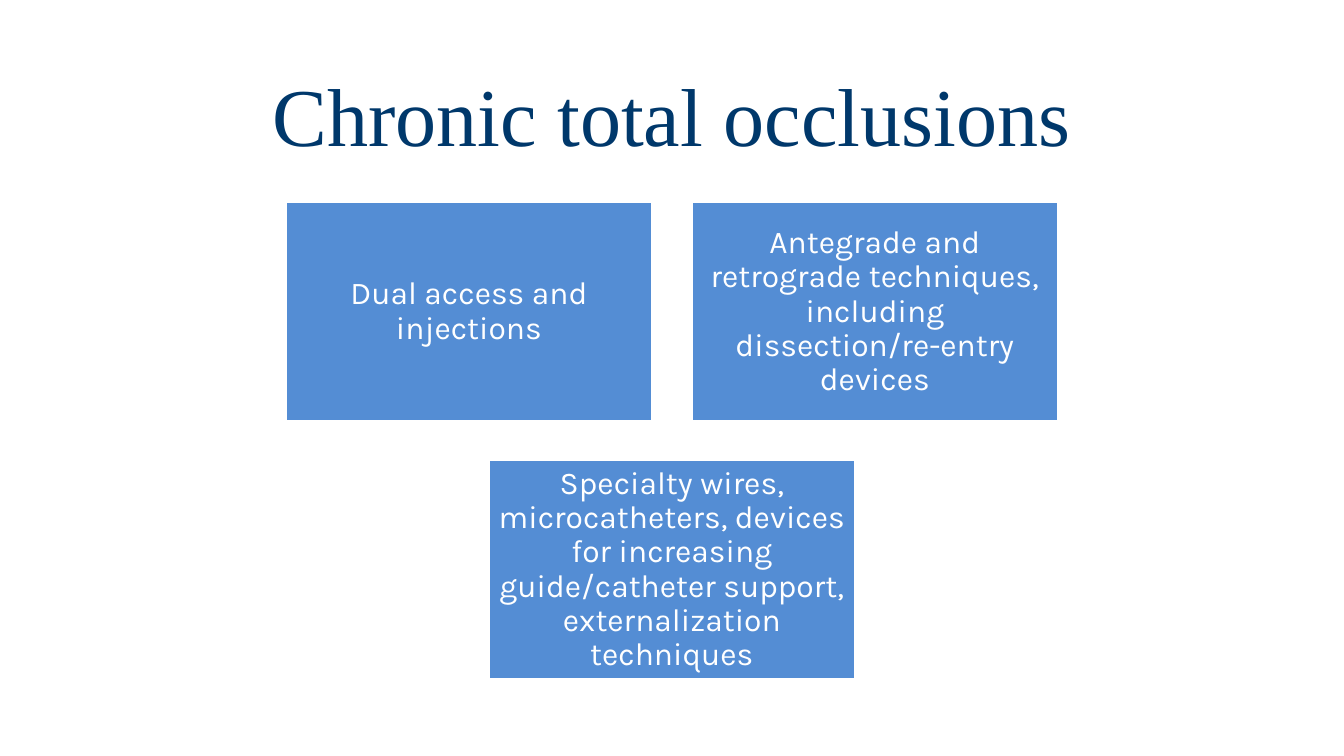
"""Build the slide on chronic total occlusions with three technique cards."""
from dataclasses import dataclass

from pptx import Presentation
from pptx import util as u
from pptx.dml.color import RGBColor
from pptx.enum import shapes, text
from pptx.slide import Slide
from pptx.text.text import TextFrame

NAVY = RGBColor(0x00, 0x38, 0x6B)
BLUE = RGBColor(0x54, 0x8D, 0xD4)
WHITE = RGBColor(0xFF, 0xFF, 0xFF)

SLIDE_WIDTH = 10
SLIDE_HEIGHT = SLIDE_WIDTH * 9 / 16
CARD_WIDTH, CARD_HEIGHT, GAP = 2.74, 1.64, 0.28
GRID_LEFT = (SLIDE_WIDTH - 2 * CARD_WIDTH - GAP) / 2
GRID_TOP = 1.5
INSET = 0.07


@dataclass(frozen=True)
class Card:
    """A technique and its column and row on the grid."""
    label: str
    column: float
    row: int


CARDS = (
    Card("Dual access and injections", 0, 0),
    Card("Antegrade and retrograde techniques, including dissection/re-entry devices", 1, 0),
    Card("Specialty wires, microcatheters, devices for increasing guide/catheter support, "
         "externalization techniques", 0.5, 1),
)


def write(frame: TextFrame, content: str, font_name: str, size: float, color: RGBColor,
          line_spacing: float) -> None:
    """Write one centred paragraph in the middle of a text frame."""
    frame.word_wrap = True
    frame.auto_size = text.MSO_AUTO_SIZE.NONE
    frame.vertical_anchor = text.MSO_ANCHOR.MIDDLE
    paragraph = frame.paragraphs[0]
    paragraph.alignment = text.PP_ALIGN.CENTER
    paragraph.line_spacing = line_spacing
    run = paragraph.add_run()
    run.text = content
    run.font.name = font_name
    run.font.size = u.Pt(size)
    run.font.color.rgb = color


def add_title(slide: Slide, content: str) -> None:
    """Place and fill the title placeholder."""
    title = slide.shapes.title
    title.left, title.top = u.Inches(0.69), u.Inches(0.3)
    title.width, title.height = u.Inches(8.62), u.Inches(1.09)
    write(title.text_frame, content, "Times New Roman", 44, NAVY, 1.0)


def add_card(slide: Slide, card: Card) -> None:
    """Draw one card in its grid cell."""
    shape = slide.shapes.add_shape(
        shapes.MSO_SHAPE.RECTANGLE,
        u.Inches(GRID_LEFT + card.column * (CARD_WIDTH + GAP)),
        u.Inches(GRID_TOP + card.row * (CARD_HEIGHT + GAP)),
        u.Inches(CARD_WIDTH), u.Inches(CARD_HEIGHT))
    shape.shadow.inherit = False
    shape.fill.solid()
    shape.fill.fore_color.rgb = BLUE
    shape.line.color.rgb = WHITE
    shape.line.width = u.Pt(2)
    frame = shape.text_frame
    frame.margin_left = frame.margin_right = u.Inches(INSET)
    frame.margin_top = frame.margin_bottom = u.Inches(INSET)
    write(frame, card.label, "Karla", 17, WHITE, 0.9)


def main() -> None:
    """Create and save the presentation."""
    presentation = Presentation()
    presentation.slide_width = u.Inches(SLIDE_WIDTH)
    presentation.slide_height = u.Inches(SLIDE_HEIGHT)
    slide = presentation.slides.add_slide(presentation.slide_layouts[5])
    add_title(slide, "Chronic total occlusions")
    for card in CARDS:
        add_card(slide, card)
    presentation.save("out.pptx")


if __name__ == "__main__":
    main()
